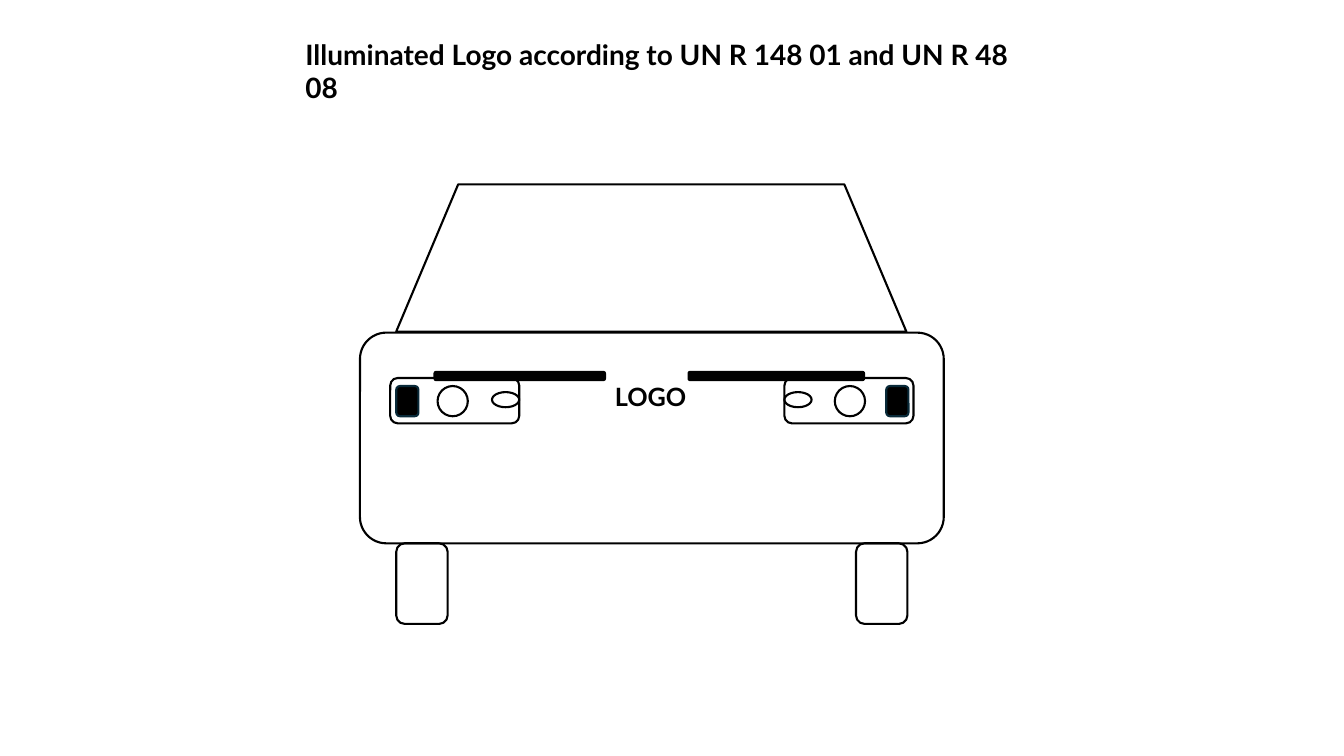
from pptx import Presentation
from pptx.dml.color import RGBColor
from pptx.enum import shapes, text
from pptx.util import Inches, Pt

BLACK = RGBColor(0x00, 0x00, 0x00)
NAVY = RGBColor(0x09, 0x2A, 0x39)
ROUNDED = shapes.MSO_SHAPE.ROUNDED_RECTANGLE
OVAL = shapes.MSO_SHAPE.OVAL
TRAPEZOID = shapes.MSO_SHAPE.TRAPEZOID


def add_part(slide, kind, box, fill=None, line=BLACK, adj=None):
    """Add one outlined car part, filled when a colour is given."""
    sp = slide.shapes.add_shape(kind, *map(Inches, box))
    sp.shadow.inherit = False
    if fill is None:
        sp.fill.background()
    else:
        sp.fill.solid()
        sp.fill.fore_color.rgb = fill
    sp.line.color.rgb = line
    sp.line.width = Pt(1.5)
    if adj is not None:
        sp.adjustments[0] = adj
    return sp


def add_label(slide, box, wording, size):
    """Add a bold black text box."""
    tf = slide.shapes.add_textbox(*map(Inches, box)).text_frame
    tf.word_wrap = True
    tf.auto_size = text.MSO_AUTO_SIZE.SHAPE_TO_FIT_TEXT
    tf.text = wording
    font = tf.paragraphs[0].runs[0].font
    font.name = "Lato"
    font.size = Pt(size)
    font.bold = True
    font.color.rgb = BLACK


def add_headlight(slide, housing, blinker, lamp, marker):
    """Add a headlight from the left edges of its four parts."""
    add_part(slide, ROUNDED, (housing, 3.75, 1.28, 0.45))
    add_part(slide, OVAL, (marker, 3.89, 0.27, 0.15))
    add_part(slide, OVAL, (lamp, 3.83, 0.3, 0.3))
    add_part(slide, ROUNDED, (blinker, 3.83, 0.22, 0.3), BLACK, NAVY)


def main():
    """Build the slide and save it."""
    prs = Presentation()
    prs.slide_width, prs.slide_height = Inches(13.33), Inches(7.5)
    slide = prs.slides.add_slide(prs.slide_layouts[6])

    for wheel in (3.93, 8.49):
        add_part(slide, ROUNDED, (wheel, 5.39, 0.51, 0.8))
    add_part(slide, ROUNDED, (3.57, 3.3, 5.79, 2.09), adj=0.125)
    add_part(slide, TRAPEZOID, (3.93, 1.83, 5.06, 1.46), adj=0.421)

    add_headlight(slide, housing=3.87, blinker=3.93, lamp=4.34, marker=4.88)
    add_headlight(slide, housing=7.78, blinker=8.79, lamp=8.28, marker=7.78)
    for left, width in ((4.31, 1.69), (6.83, 1.74)):
        add_part(slide, ROUNDED, (left, 3.69, width, 0.08), BLACK)

    add_label(slide, (6, 3.73, 0.91, 0.4), "LOGO", 18)
    add_label(slide, (2.93, 0.32, 7.48, 0.44),
              "Illuminated Logo according to UN R 148 01 and UN R 48 08", 20)
    prs.save("out.pptx")


if __name__ == "__main__":
    main()
